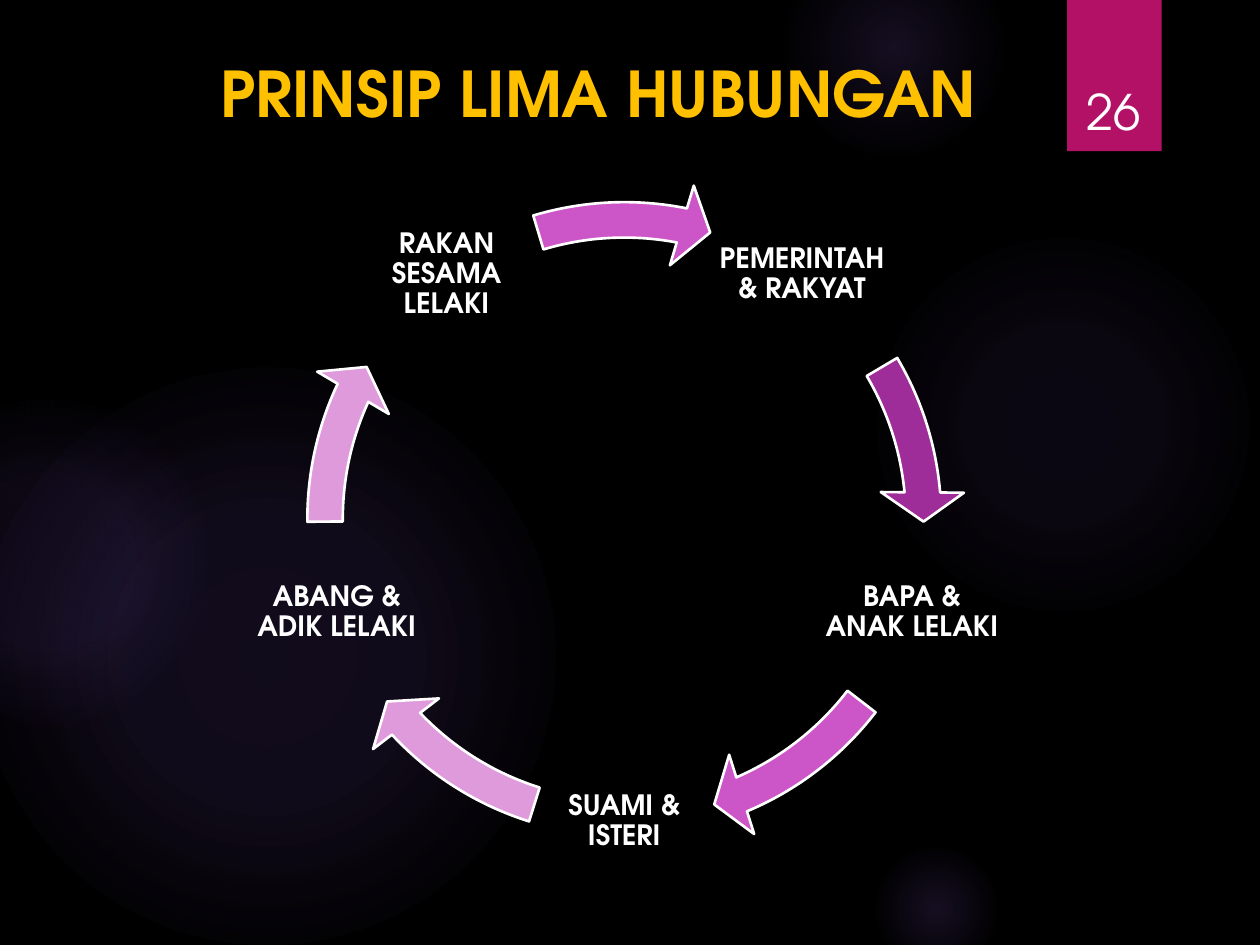
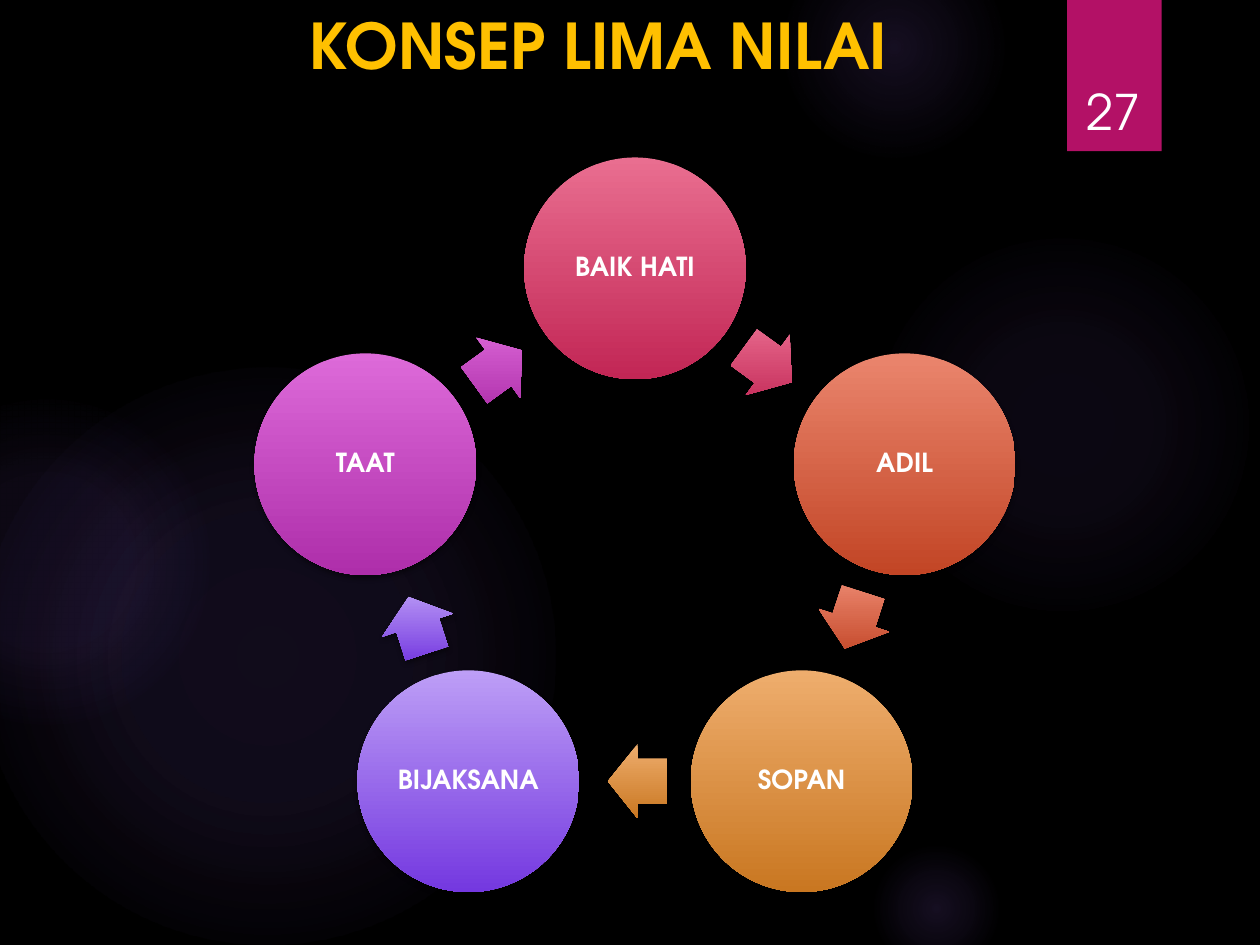
import math
from typing import NamedTuple

from lxml import etree
from pptx import Presentation
from pptx import util as u
from pptx.dml.color import RGBColor
from pptx.enum import shapes, text
from pptx.oxml import parse_xml
from pptx.oxml.ns import nsdecls, qn

COLORS = {
    "back": "000000", "glow": "9B6BF2", "tab": "B31166", "title": "FFC000", "white": "FFFFFF",
    "plum": "9E2D9A", "orchid": "CC56C8", "lilac": "DF9ADC",
}
FONT = "TeX Gyre Adventor"
COLUMNS, ROWS = 100, 75  # the slide's grid
WIDTH, HEIGHT = u.Inches(10), u.Inches(7.5)
FIRST_NUMBER = 26
STEP = 72  # degrees between neighbours on a ring of five


class Area(NamedTuple):
    """A rectangle in grid columns and rows."""
    left: float
    top: float
    width: float
    height: float

    def lengths(self) -> list[int]:
        wholes = (WIDTH / COLUMNS, HEIGHT / ROWS) * 2
        return [round(share * whole) for share, whole in zip(self, wholes)]


class Glow(NamedTuple):
    left: float
    top: float
    size: float
    stops: list[tuple[int, int]]  # position and opacity, in percent


class Relation(NamedTuple):
    """A label and the bent arrow that leaves it."""
    label: str
    color: str
    start: float
    end: float


class Value(NamedTuple):
    label: str
    light: str
    dark: str


GLOWS = [
    Glow(68.9, 18.3, 30.8, [(0, 7), (36, 6), (69, 0)]),
    Glow(62.2, -5, 17.5, [(0, 14), (36, 7), (73, 0)]),
    Glow(68.9, 66.7, 10.8, [(0, 14), (36, 7), (66, 0)]),
    Glow(-1.7, 29.2, 45.8, [(0, 11), (36, 10), (75, 0)]),
    Glow(-9.2, 31.7, 25.8, [(0, 8), (36, 8), (72, 0)]),
]
RELATIONS = [
    Relation("PEMERINTAH & RAKYAT", "plum", 329.44, 354.88),
    Relation("BAPA & ANAK LELAKI", "orchid", 37.56, 66.91),
    Relation("SUAMI & ISTERI", "lilac", 107.49, 136.84),
    Relation("ABANG & ADIK LELAKI", "lilac", 179.52, 204.96),
    Relation("RAKAN SESAMA LELAKI", "orchid", 253.31, 281.09),
]
VALUES = [
    Value("BAIK HATI", "E96E90", "C22655"),
    Value("ADIL", "EA856D", "C24525"),
    Value("SOPAN", "EEAD6D", "C97721"),
    Value("BIJAKSANA", "BD9EF6", "7438E0"),
    Value("TAAT", "DD6AD9", "AE2EAA"),
]


def rgb(name: str) -> RGBColor:
    return RGBColor.from_string(COLORS[name])


def around(x: float, y: float, width: float, height: float) -> Area:
    return Area(x - width / 2, y - height / 2, width, height)


def on_ring(center: tuple[float, float], radius: float, degrees: float) -> tuple[float, float]:
    angle = math.radians(degrees)
    return center[0] + radius * math.cos(angle), center[1] + radius * math.sin(angle)


def add_figure(page, kind, area: Area):
    """Add a preset shape without line or shadow."""
    figure = page.shapes.add_shape(kind, *area.lengths())
    figure.shadow.inherit = False
    figure.line.fill.background()
    return figure


def set_gradient(figure, stops: list[tuple[int, str, int]], shading: str) -> None:
    """Fill with stops of position, colour and opacity."""
    marks = "".join(
        f'<a:gs pos="{place * 1000}"><a:srgbClr val="{color}">'
        f'<a:alpha val="{opacity * 1000}"/></a:srgbClr></a:gs>'
        for place, color, opacity in stops)
    figure.fill.background()
    properties = figure.element.spPr
    properties.replace(properties.find(qn("a:noFill")), parse_xml(
        f'<a:gradFill {nsdecls("a")} rotWithShape="0"><a:gsLst>{marks}</a:gsLst>{shading}</a:gradFill>'))


def set_vertical_gradient(figure, value: Value) -> None:
    stops = [(0, value.light, 100), (100, value.dark, 100)]
    set_gradient(figure, stops, '<a:lin ang="5400000" scaled="0"/>')


def add_shadow(figure) -> None:
    effects = figure.element.spPr.find(qn("a:effectLst"))
    shadow = etree.SubElement(effects, qn("a:outerShdw"), blurRad=str(u.Pt(3)), dist=str(u.Pt(2)),
                              dir="5400000", rotWithShape="0")
    color = etree.SubElement(shadow, qn("a:srgbClr"), val=COLORS["back"])
    etree.SubElement(color, qn("a:alpha"), val="45000")


def write(box, words: str, size: int, color: str = "white", bold: bool = True,
          anchor=text.MSO_ANCHOR.MIDDLE, inset: float | None = 0.02, spacing: float | None = 0.9) -> None:
    """Put one centred paragraph in a box."""
    frame = box.text_frame
    frame_format = {"word_wrap": True, "auto_size": text.MSO_AUTO_SIZE.NONE, "vertical_anchor": anchor}
    if inset is not None:
        sides = ("left", "top", "right", "bottom")
        frame_format |= {f"margin_{side}": u.Inches(inset) for side in sides}
    for name, value in frame_format.items():
        setattr(frame, name, value)
    para = frame.paragraphs[0]
    para.alignment = text.PP_ALIGN.CENTER
    para.line_spacing = spacing
    span = para.add_run()
    span.text = words
    for name, value in {"name": FONT, "size": u.Pt(size), "bold": bold}.items():
        setattr(span.font, name, value)
    span.font.color.rgb = rgb(color)


def dress_layout(layout, page) -> None:
    """Give the layout its background, glows and number tab."""
    fill = layout.background.fill
    fill.solid()
    fill.fore_color.rgb = rgb("back")
    figures = []
    for glow in GLOWS:
        figure = add_figure(page, shapes.MSO_SHAPE.OVAL, Area(glow.left, glow.top, glow.size, glow.size))
        stops = [(place, COLORS["glow"], opacity) for place, opacity in glow.stops]
        set_gradient(figure, stops, '<a:path path="circle"><a:fillToRect l="50000" t="50000" '
                                    'r="50000" b="50000"/></a:path>')
        figures.append(figure)
    tab = add_figure(page, shapes.MSO_SHAPE.RECTANGLE, Area(84.7, 0, 7.5, 12))
    tab.fill.solid()
    tab.fill.fore_color.rgb = rgb("tab")
    add_shadow(tab)
    figures.append(tab)
    # New shapes move from the page to the layout, behind its placeholders
    for order, figure in enumerate(figures):
        figure.element.nvSpPr.cNvPr.set("id", str(100 + order))
        layout.shapes.element.insert(2 + order, figure.element)


def add_heading(page, words: str, area: Area, number: int) -> None:
    title = page.shapes.title
    for name, value in zip(("left", "top", "width", "height"), area.lengths()):
        setattr(title, name, value)
    plain = {"inset": None, "spacing": None}
    write(title, words, 36, "title", anchor=text.MSO_ANCHOR.TOP, **plain)
    box = page.shapes.add_textbox(*Area(84.9, 3.2, 6.9, 8.4).lengths())
    write(box, str(number), 28, bold=False, anchor=text.MSO_ANCHOR.BOTTOM, **plain)


def draw_relations(page) -> None:
    """Five labels joined by bent arrows."""
    center = (49.55, 41.2)
    for order, relation in enumerate(RELATIONS):
        spot = on_ring(center, 24, STEP * order - 54)
        box = page.shapes.add_textbox(*around(*spot, 14.4, 14.4).lengths())
        write(box, relation.label, 16)
        arrow = add_figure(page, shapes.MSO_SHAPE.CIRCULAR_ARROW, around(*center, 54.1, 54.1))
        # Thickness, head angle, end, start, head width; 0.6 per degree
        settings = (0.052, 3.36, relation.end * 0.6, relation.start * 0.6, 0.061)
        for index, setting in enumerate(settings):
            arrow.adjustments[index] = setting
        arrow.fill.solid()
        arrow.fill.fore_color.rgb = rgb(relation.color)
        arrow.line.color.rgb = rgb("white")
        arrow.line.width = u.Pt(1.5)


def draw_values(page) -> None:
    """Five circles with a block arrow between neighbours."""
    center, radius, back_shift = (50.4, 43.8), 22.5, 0.2
    for order, value in enumerate(VALUES):
        degrees = STEP * order - 90
        circle = add_figure(page, shapes.MSO_SHAPE.OVAL, around(*on_ring(center, radius, degrees), 17.6, 17.6))
        write(circle, value.label, 15)

        turn = STEP * order + 36
        middle = on_ring(center, radius * math.cos(math.radians(STEP / 2)), degrees + STEP / 2)
        spot = on_ring(middle, -back_shift, turn)
        arrow = add_figure(page, shapes.MSO_SHAPE.RIGHT_ARROW, around(*spot, 4.7, 5.9))
        arrow.rotation = turn
        arrow.adjustments[0], arrow.adjustments[1] = 0.6, 0.5
        for figure in (circle, arrow):
            set_vertical_gradient(figure, value)
            add_shadow(figure)


def main() -> None:
    deck = Presentation()
    deck.slide_width, deck.slide_height = WIDTH, HEIGHT
    layout = deck.slide_layouts.get_by_name("Title Only")
    plans = [
        ("PRINSIP LIMA HUBUNGAN", Area(5, 3.8, 85, 10), draw_relations),
        ("KONSEP LIMA NILAI", Area(5, 0, 85, 10.8), draw_values),
    ]
    for number, (words, area, draw) in enumerate(plans, FIRST_NUMBER):
        page = deck.slides.add_slide(layout)
        if number == FIRST_NUMBER:
            dress_layout(layout, page)
        add_heading(page, words, area, number)
        draw(page)
    deck.save("out.pptx")


if __name__ == "__main__":
    main()
